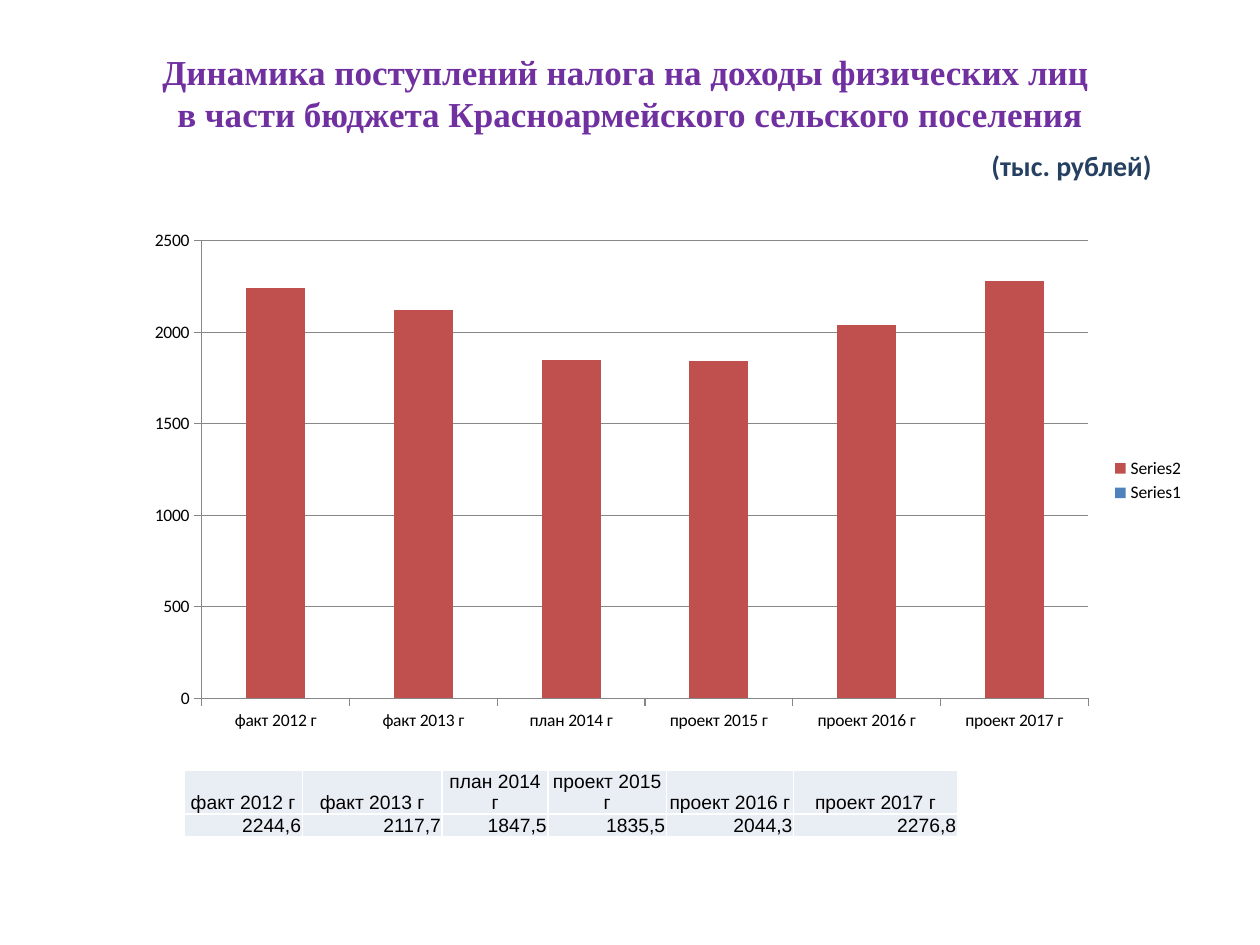
from pptx import Presentation
from pptx import util as u
from pptx.chart import data as chart_data
from pptx.dml import color
from pptx.enum import chart as chart_enum
from pptx.enum import text

Inches, Pt = u.Inches, u.Pt
ALIGN = text.PP_ALIGN


def rgb(value):
    return color.RGBColor.from_string(value)


def write(paragraph, content, *, size, font, hex_color="000000", bold=False, align=ALIGN.CENTER):
    paragraph.alignment = align
    run = paragraph.add_run()
    run.text = content
    run.font.size = Pt(size)
    run.font.name = font
    run.font.bold = bold
    run.font.color.rgb = rgb(hex_color)


YEARS = ["факт 2012 г", "факт 2013 г", "план 2014 г",
         "проект 2015 г", "проект 2016 г", "проект 2017 г"]
AMOUNTS = ["2244,6", "2117,7", "1847,5", "1835,5", "2044,3", "2276,8"]
BAR_HEIGHTS = [2240, 2120, 1850, 1840, 2040, 2280]

presentation = Presentation()
presentation.slide_width, presentation.slide_height = Inches(10), Inches(7.5)
slide = presentation.slides.add_slide(presentation.slide_layouts[5])

# Title with the unit of measure below it
title = slide.shapes.title
title.left, title.top = Inches(0.5), Inches(0.3)
title.width, title.height = Inches(9), Inches(1.25)
frame = title.text_frame
frame.auto_size = text.MSO_AUTO_SIZE.NONE
frame.vertical_anchor = text.MSO_ANCHOR.MIDDLE
heading = frame.paragraphs[0]
for line in ["Динамика поступлений налога на доходы физических лиц ",
             "в части бюджета Красноармейского сельского поселения"]:
    if heading.runs:
        heading.add_line_break()
    write(heading, line, size=20, font="Times New Roman", hex_color="7030A0", bold=True)
unit = frame.add_paragraph()
unit.space_before = Pt(8)
write(unit, "(тыс. рублей)", size=16, font="Calibri", hex_color="254061",
      bold=True, align=ALIGN.RIGHT)
unit._p.get_or_add_pPr().set("marR", str(Inches(0.26)))

# Table of yearly values
widths = [0.94, 1.11, 0.84, 0.94, 1.01, 1.3]
table = slide.shapes.add_table(2, len(YEARS), Inches(1.46), Inches(6.11),
                               Inches(sum(widths)), Inches(0.5)).table
table.first_row = table.horz_banding = False
for row, height in zip(table.rows, [0.3, 0.17]):
    row.height = Inches(height)
for column, width in zip(table.columns, widths):
    column.width = Inches(width)
for row, (contents, align) in enumerate([(YEARS, ALIGN.CENTER), (AMOUNTS, ALIGN.RIGHT)]):
    for column, content in enumerate(contents):
        cell = table.cell(row, column)
        cell.margin_left = cell.margin_right = cell.margin_top = Inches(0.01)
        cell.margin_bottom = 0
        cell.vertical_anchor = text.MSO_ANCHOR.BOTTOM
        cell.fill.solid()
        cell.fill.fore_color.rgb = rgb("E9EDF4")
        write(cell.text_frame.paragraphs[0], content, size=11, font="Arial", align=align)

# Stacked column chart; the first series is empty
data = chart_data.CategoryChartData()
data.categories = YEARS
data.add_series("Series1", [None] * len(YEARS))
data.add_series("Series2", BAR_HEIGHTS)
chart = slide.shapes.add_chart(chart_enum.XL_CHART_TYPE.COLUMN_STACKED, Inches(1.06),
                               Inches(1.75), Inches(8.44), Inches(4.13), data).chart
chart.has_title = False
chart.font.size = Pt(10)
chart.font.name = "Calibri"
chart.font.color.rgb = rgb("000000")
chart.has_legend = True
chart.legend.position = chart_enum.XL_LEGEND_POSITION.RIGHT
chart.legend.include_in_layout = False

plot = chart.plots[0]
plot.gap_width, plot.overlap = 150, 100
plot.vary_by_categories = False
for series, fill in zip(plot.series, ["4F81BD", "C0504D"]):
    series.format.fill.solid()
    series.format.fill.fore_color.rgb = rgb(fill)

# Axes and gridlines
value_axis, category_axis = chart.value_axis, chart.category_axis
value_axis.minimum_scale, value_axis.maximum_scale = 0, 2500
value_axis.major_unit = 500
value_axis.has_major_gridlines = True
value_axis.tick_labels.number_format = "0"
value_axis.tick_labels.number_format_is_linked = False
for axis in (value_axis, category_axis):
    axis.major_tick_mark = chart_enum.XL_TICK_MARK.OUTSIDE
for part in (value_axis, category_axis, value_axis.major_gridlines):
    part.format.line.color.rgb = rgb("878787")
    part.format.line.width = Pt(0.75)

presentation.save("out.pptx")
